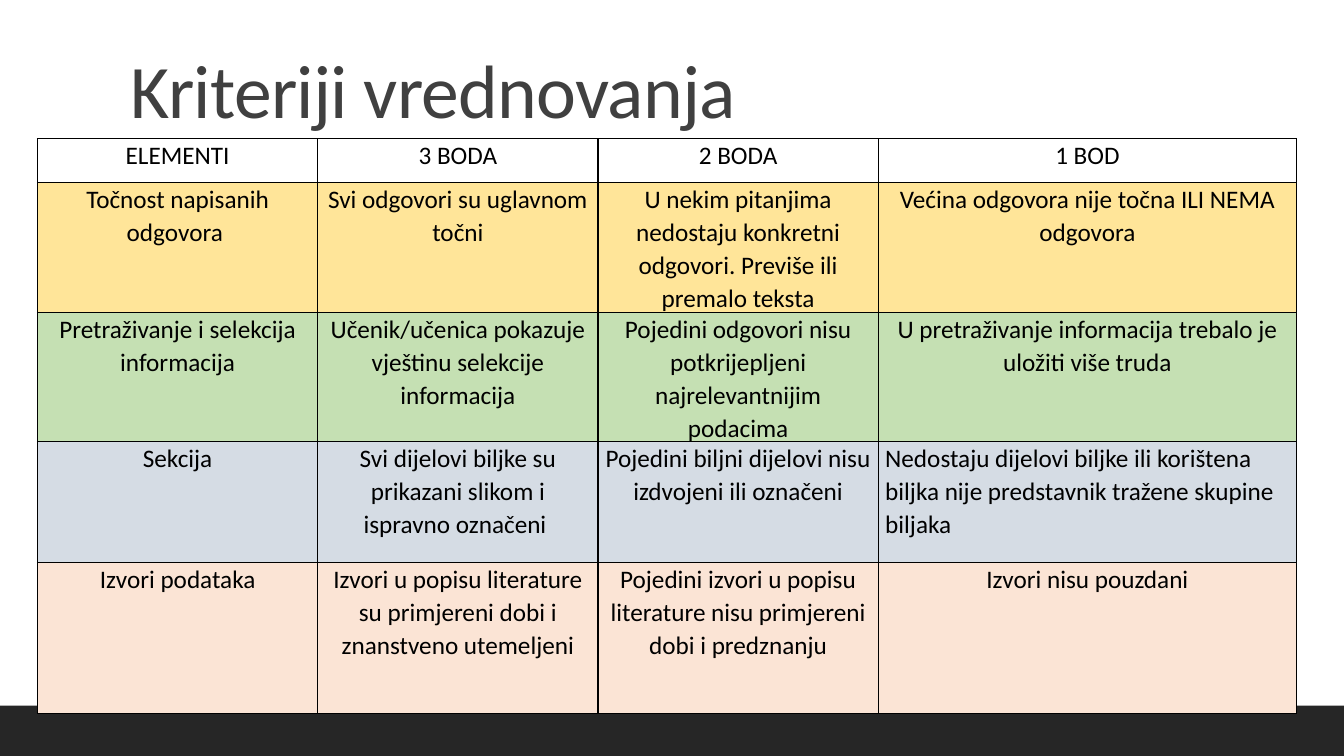
from dataclasses import dataclass

from lxml import etree
from pptx import Presentation
from pptx.dml.color import RGBColor
from pptx.enum.shapes import MSO_SHAPE
from pptx.enum.text import MSO_ANCHOR, PP_ALIGN
from pptx.oxml.ns import qn
from pptx.slide import Slide
from pptx.table import _Cell
from pptx.text.text import _Paragraph
from pptx.util import Pt

RECTANGLE = MSO_SHAPE.RECTANGLE
BOTTOM = MSO_ANCHOR.BOTTOM
LEFT, CENTER = PP_ALIGN.LEFT, PP_ALIGN.CENTER

FONT = "Calibri"
COLORS = {
    "footer": "262626",
    "title": "404040",
    "text": "000000",
    "border": "000000",
    "accuracy": "FFE599",
    "research": "C5E0B3",
    "section": "D5DCE4",
    "sources": "FBE4D5",
}
SLIDE_WIDTH, SLIDE_HEIGHT = 960, 540
FOOTER_HEIGHT = 36
TABLE_LEFT, TABLE_TOP = 26.8, 99
COLUMN_WIDTHS = [200.2, 200.2, 200.2, 298.8]


@dataclass
class Criterion:
    height: float
    texts: list[str]
    color: str | None = None
    last_align: PP_ALIGN = CENTER


CRITERIA = [
    Criterion(31.6, ["ELEMENTI", "3 BODA", "2 BODA", "1 BOD"]),
    Criterion(86.4, [
        "Točnost napisanih odgovora ",
        "Svi odgovori su uglavnom točni",
        "U nekim pitanjima nedostaju konkretni odgovori. Previše ili premalo teksta",
        "Većina odgovora nije točna ILI NEMA odgovora",
    ], "accuracy"),
    Criterion(86.4, [
        "Pretraživanje i selekcija informacija",
        "Učenik/učenica pokazuje vještinu selekcije informacija",
        "Pojedini odgovori nisu potkrijepljeni najrelevantnijim podacima",
        "U pretraživanje informacija trebalo je uložiti više truda",
    ], "research"),
    Criterion(86.4, [
        "Sekcija",
        "Svi dijelovi biljke su prikazani slikom i ispravno označeni ",
        "Pojedini biljni dijelovi nisu izdvojeni ili označeni",
        "Nedostaju dijelovi biljke ili korištena biljka nije predstavnik "
        "tražene skupine biljaka",
    ], "section", LEFT),
    Criterion(108, [
        "Izvori podataka",
        "Izvori u popisu literature su primjereni dobi i znanstveno utemeljeni",
        "Pojedini izvori u popisu literature nisu primjereni dobi i predznanju",
        "Izvori nisu pouzdani",
    ], "sources"),
]


def rgb(name: str) -> RGBColor:
    return RGBColor.from_string(COLORS[name])


def format_paragraph(paragraph: _Paragraph, size: float, color: str,
                     align: PP_ALIGN, spacing: float) -> None:
    paragraph.alignment = align
    paragraph.line_spacing = spacing
    for run in paragraph.runs:
        run.font.name = FONT
        run.font.size = Pt(size)
        run.font.color.rgb = rgb(color)


def add_footer(slide: Slide) -> None:
    footer = slide.shapes.add_shape(
        RECTANGLE, 0, Pt(SLIDE_HEIGHT - FOOTER_HEIGHT), Pt(SLIDE_WIDTH), Pt(FOOTER_HEIGHT))
    footer.shadow.inherit = False
    footer.fill.solid()
    footer.fill.fore_color.rgb = rgb("footer")
    footer.line.fill.background()


def add_title(slide: Slide) -> None:
    frame = slide.shapes.add_textbox(Pt(86.4), Pt(13), Pt(792), Pt(85.7)).text_frame
    frame.word_wrap = True
    frame.vertical_anchor = BOTTOM
    frame.text = "Kriteriji vrednovanja"
    heading = frame.paragraphs[0]
    format_paragraph(heading, 54, "title", LEFT, 0.8)
    heading.runs[0].font._element.set("spc", "-50")


def set_borders(cell: _Cell) -> None:
    """Draw a 1 pt line on all four sides; lines must precede the cell fill."""
    properties = cell._tc.get_or_add_tcPr()
    for position, side in enumerate(("a:lnL", "a:lnR", "a:lnT", "a:lnB")):
        line = etree.Element(qn(side), w=str(Pt(1)))
        fill = etree.SubElement(line, qn("a:solidFill"))
        etree.SubElement(fill, qn("a:srgbClr"), val=COLORS["border"])
        properties.insert(position, line)


def fill_cell(cell: _Cell, text: str, color: str | None, align: PP_ALIGN) -> None:
    cell.margin_left = cell.margin_right = Pt(5)
    cell.margin_top = cell.margin_bottom = 0
    if color:
        cell.fill.solid()
        cell.fill.fore_color.rgb = rgb(color)
    else:
        cell.fill.background()
    set_borders(cell)
    cell.text_frame.text = text
    format_paragraph(cell.text_frame.paragraphs[0], 18, "text", align, 1.07)


def add_criteria_table(slide: Slide) -> None:
    table = slide.shapes.add_table(
        len(CRITERIA), len(COLUMN_WIDTHS), Pt(TABLE_LEFT), Pt(TABLE_TOP),
        Pt(sum(COLUMN_WIDTHS)), Pt(sum(c.height for c in CRITERIA))).table
    table.first_row = table.horz_banding = False
    for column, width in zip(table.columns, COLUMN_WIDTHS):
        column.width = Pt(width)
    for row, criterion in zip(table.rows, CRITERIA):
        row.height = Pt(criterion.height)
        aligns = [CENTER] * (len(COLUMN_WIDTHS) - 1) + [criterion.last_align]
        for cell, text, align in zip(row.cells, criterion.texts, aligns):
            fill_cell(cell, text, criterion.color, align)


def main() -> None:
    presentation = Presentation()
    presentation.slide_width = Pt(SLIDE_WIDTH)
    presentation.slide_height = Pt(SLIDE_HEIGHT)
    slide = presentation.slides.add_slide(presentation.slide_layouts[6])
    add_footer(slide)
    add_title(slide)
    add_criteria_table(slide)
    presentation.save("out.pptx")


if __name__ == "__main__":
    main()
